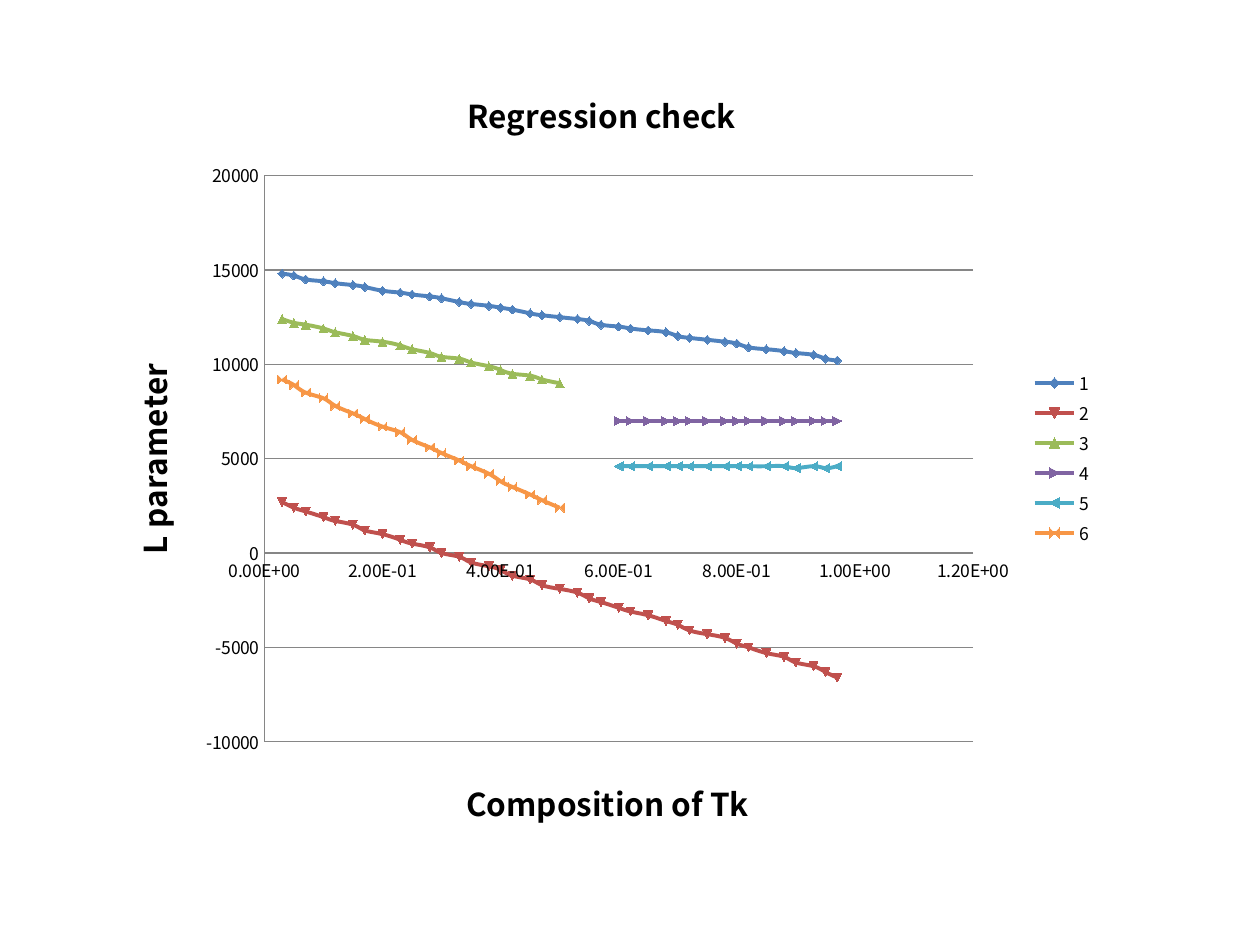
from lxml import etree
from pptx import Presentation
from pptx.chart.data import XyChartData
from pptx.dml.color import RGBColor
from pptx.enum.chart import XL_CHART_TYPE, XL_LEGEND_POSITION, XL_TICK_MARK
from pptx.oxml import parse_xml
from pptx.util import Inches, Pt

SMOOTH = XL_CHART_TYPE.XY_SCATTER_SMOOTH
RIGHT = XL_LEGEND_POSITION.RIGHT
NO_TICK = XL_TICK_MARK.NONE
FONT = "Noto Sans CJK KR"
COLORS = {
    "text": "000000", "axis": "868686",
    "1": "4F81BD", "2": "C0504D", "3": "9BBB59",
    "4": "8064A2", "5": "4BACC6", "6": "F79646",
}

# Each line: name, first and last step, intercept, change per step
STEPS_PER_UNIT = 40
LINES = [
    ("1", 1, 39, 14900, -120),
    ("2", 1, 39, 2895, -240),
    ("3", 1, 20, 12600, -180),
    ("4", 24, 39, 7000, 0),
    ("5", 24, 39, 4600, 0),
    ("6", 1, 20, 9600, -360),
]
# Points off their line
DIPS = {("2", 36): -5800, ("2", 38): -6300, ("2", 39): -6600,
        ("5", 36): 4500, ("5", 38): 4500}


def write_title(owner, text):
    p = owner.text_frame.paragraphs[0]
    r = p.add_run()
    r.text = text
    r.font.name, r.font.size, r.font.bold = FONT, Pt(18), True
    r.font.color.rgb = RGBColor.from_string(COLORS["text"])


prs = Presentation()
prs.slide_width, prs.slide_height = Inches(10), Inches(7.5)
s = prs.slides.add_slide(prs.slide_layouts[6])

# Data, rounded to hundreds
data = XyChartData()
for name, first, last, start, slope in LINES:
    series = data.add_series(name)
    for i in range(first, last + 1):
        value = DIPS.get((name, i), round(start + slope * i, -2))
        series.add_data_point(round(i / STEPS_PER_UNIT, 2), value)

# Chart, title and legend
chart = s.shapes.add_chart(SMOOTH, Inches(0.78), Inches(0.47),
                           Inches(7.99), Inches(6.33), data).chart
chart.font.name, chart.font.size = FONT, Pt(10)
chart.font.color.rgb = RGBColor.from_string(COLORS["text"])
chart.has_title = True
write_title(chart.chart_title, "Regression check")
chart.has_legend = True
chart.legend.position = RIGHT
chart.legend.include_in_layout = False

# Axes
AXES = [
    (chart.category_axis, "Composition of Tk", 0, 1.2, 0.2, "0.00E+00", False),
    (chart.value_axis, "L parameter", -10000, 20000, 5000, "General", True),
]
for axis, title, low, high, unit, fmt, grid in AXES:
    write_title(axis.axis_title, title)
    axis.minimum_scale, axis.maximum_scale, axis.major_unit = low, high, unit
    axis.major_tick_mark = axis.minor_tick_mark = NO_TICK
    axis.tick_labels.number_format = fmt
    axis.tick_labels.number_format_is_linked = False
    axis.has_major_gridlines = grid
    lines = [axis.format.line] + ([axis.major_gridlines.format.line] if grid else [])
    for line in lines:
        line.color.rgb = RGBColor.from_string(COLORS["axis"])
        line.width = Pt(0.75)

# Series
plot = chart.plots[0]
plot.vary_by_categories = False
for series in plot.series:
    color = RGBColor.from_string(COLORS[series.name])
    series.format.line.color.rgb = color
    series.format.line.width = Pt(2.25)
    series.marker.size = 5
    series.marker.format.fill.solid()
    series.marker.format.fill.fore_color.rgb = color
    series.marker.format.line.color.rgb = color
    for smooth in series._element.findall("{*}smooth"):
        smooth.set("val", "1")

# Plot area as shares of the chart
layout = parse_xml(
    '<c:layout xmlns:c="http://schemas.openxmlformats.org/drawingml/2006/chart">'
    '<c:manualLayout><c:layoutTarget val="inner"/>'
    '<c:xMode val="edge"/><c:yMode val="edge"/></c:manualLayout></c:layout>')
for tag, share in zip("xywh", (0.165, 0.146, 0.704, 0.71)):
    node = etree.SubElement(layout[0], layout.tag.replace("layout", tag))
    node.set("val", str(share))
area = chart._chartSpace.find(".//{*}plotArea")
for old in area.findall("{*}layout"):
    area.remove(old)
area.insert(0, layout)

prs.save("out.pptx")
